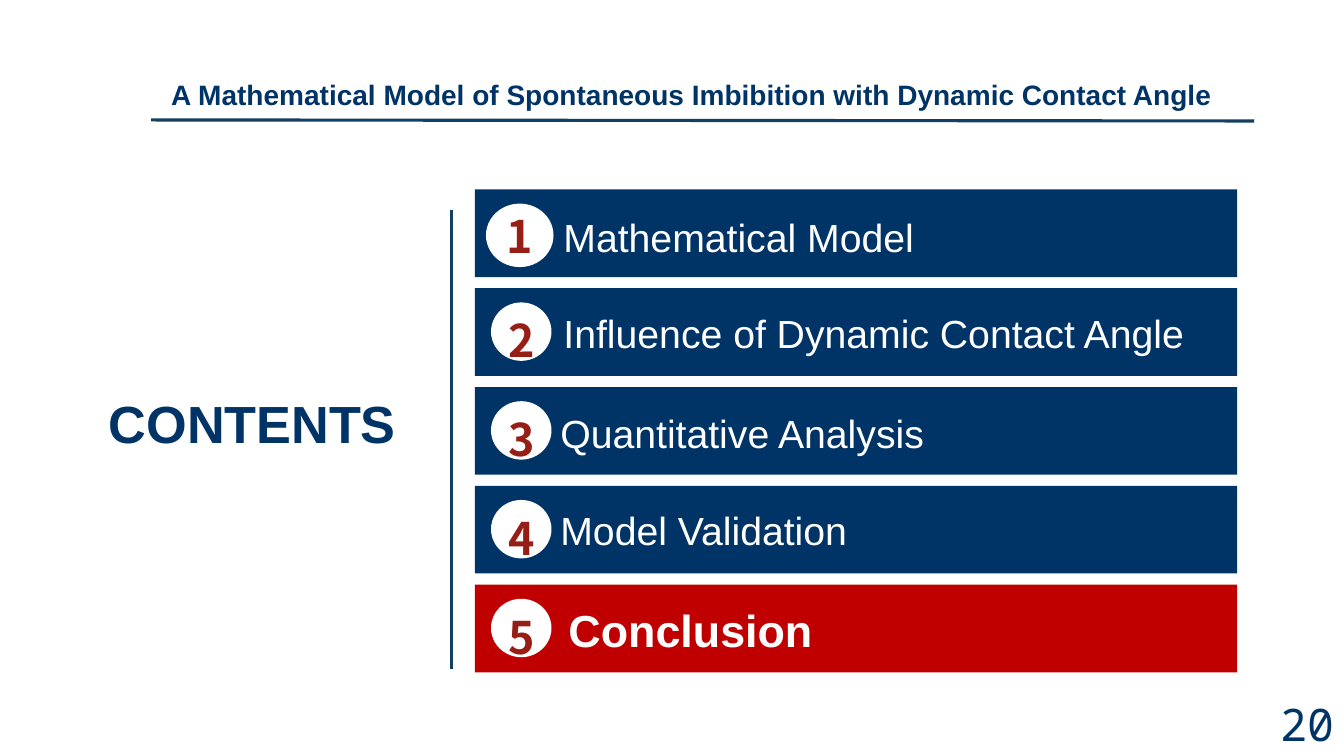
"""Build the contents slide with its five numbered section bars."""
from lxml import etree
from pptx import Presentation
from pptx.dml.color import RGBColor
from pptx.enum.shapes import MSO_CONNECTOR, MSO_SHAPE
from pptx.enum.text import MSO_ANCHOR, PP_ALIGN
from pptx.oxml.ns import qn
from pptx.util import Inches, Pt

RECT, OVAL = MSO_SHAPE.RECTANGLE, MSO_SHAPE.OVAL
STRAIGHT = MSO_CONNECTOR.STRAIGHT
TOP, MIDDLE, BOTTOM = MSO_ANCHOR.TOP, MSO_ANCHOR.MIDDLE, MSO_ANCHOR.BOTTOM
LEFT, CENTER, RIGHT, JUSTIFY = PP_ALIGN.LEFT, PP_ALIGN.CENTER, PP_ALIGN.RIGHT, PP_ALIGN.JUSTIFY

NAVY, RULE, RED, DARK_RED, WHITE = "003366", "133F62", "C00000", "971E15", "FFFFFF"

TITLE = "A Mathematical Model of Spontaneous Imbibition with Dynamic Contact Angle"
HEADING = "CONTENTS"
PAGE = "20"
SECTIONS = [
    ("Mathematical Model", 5.49, 2.07),
    ("Influence of Dynamic Contact Angle", 5.49, 3.02),
    ("Quantitative Analysis", 5.46, 4.01),
    ("Model Validation", 5.46, 4.97),
    ("Conclusion", 5.54, 5.93),
]
CURRENT = 5
RULES = [(1.5, 1.19, 12.44, 1.2), (4.48, 2.08, 4.48, 6.64)]

BAR_X, BAR_Y, BAR_W, BAR_H, BAR_STEP = 4.71, 1.88, 7.56, 0.87, 0.98

TITLE_FONT = {"name": "Arial", "size": 20, "color": NAVY, "bold": True}
HEADING_FONT = {"name": "Arial", "size": 37.3, "color": NAVY, "bold": True}
PAGE_FONT = {"name": "Noto Sans Mono", "size": 32, "color": NAVY}
NUMBER_FONT = {"name": "Noto Sans CJK SC", "size": 32, "color": DARK_RED, "bold": True}
LABEL_FONT = {"name": "Arial", "size": 28, "color": WHITE}
CURRENT_FONT = {"name": "Arial", "size": 32, "color": WHITE, "bold": True}

prs = Presentation()
prs.slide_width, prs.slide_height = Inches(13.33), Inches(7.5)
s = prs.slides.add_slide(prs.slide_layouts[6])


def rgb(color):
    return RGBColor.from_string(color)


def write(sp, text, font, align=LEFT, anchor=TOP, wrap=True, spacing=None):
    tf = sp.text_frame
    tf.word_wrap, tf.vertical_anchor = wrap, anchor
    p = tf.paragraphs[0]
    p.alignment = align
    if spacing:
        p.line_spacing = spacing
    r = p.add_run()
    r.text = text
    for key, value in font.items():
        if key == "color":
            r.font.color.rgb = rgb(value)
        else:
            setattr(r.font, key, Pt(value) if key == "size" else value)
    return p


def add_text(box, text, font, **layout):
    return write(s.shapes.add_textbox(*map(Inches, box)), text, font, **layout)


def add_shape(kind, box, fill):
    sp = s.shapes.add_shape(kind, *map(Inches, box))
    sp.shadow.inherit = False
    sp.fill.solid()
    sp.fill.fore_color.rgb = rgb(fill)
    sp.line.fill.background()
    return sp


for ends in RULES:
    line = s.shapes.add_connector(STRAIGHT, *map(Inches, ends))
    line.line.color.rgb, line.line.width = rgb(RULE), Pt(2.25)
    etree.SubElement(line._element.spPr, qn("a:effectLst"))

p = add_text((1.44, 0.42, 11, 0.73), TITLE, TITLE_FONT, anchor=BOTTOM)
p._p.get_or_add_pPr().set("marL", str(Inches(0.16)))
add_text((12.27, 6.86, 1.06, 0.56), PAGE, PAGE_FONT, align=RIGHT)
write(add_shape(RECT, (0.98, 3.83, 3.08, 0.73), WHITE), HEADING, HEADING_FONT,
      align=JUSTIFY, wrap=False)

for i, (label, x, y) in enumerate(SECTIONS):
    number, bar_y = i + 1, BAR_Y + i * BAR_STEP
    current = number == CURRENT
    add_shape(RECT, (BAR_X, bar_y, BAR_W, BAR_H), RED if current else NAVY)
    if number == 1:
        circle = add_shape(OVAL, (4.82, bar_y + 0.14, 0.67, 0.63), WHITE)
        write(circle, "1", NUMBER_FONT, align=CENTER, anchor=MIDDLE, wrap=False)
    else:
        add_shape(OVAL, (4.87, bar_y + 0.14, 0.6, 0.58), WHITE)
        add_text((4.74, bar_y - 0.07, 0.86, 0.81), str(number), NUMBER_FONT,
                 align=CENTER, spacing=1.5)
    add_text((x, y, 6.7, 0.57), label, CURRENT_FONT if current else LABEL_FONT)

prs.save("out.pptx")
